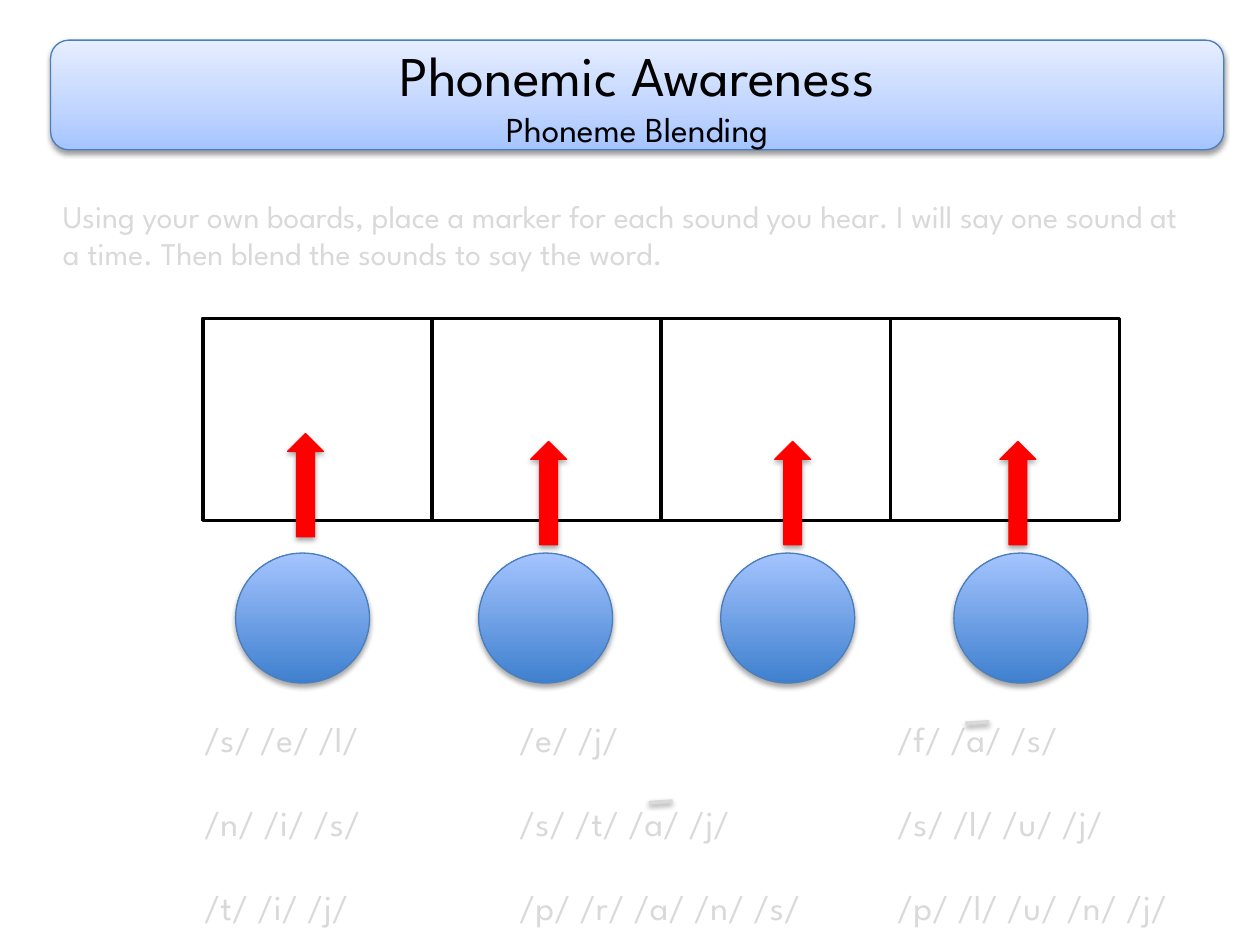
from copy import deepcopy

from lxml.etree import SubElement
from pptx import Presentation
from pptx.dml.color import RGBColor
from pptx.enum.shapes import MSO_CONNECTOR, MSO_SHAPE
from pptx.enum.text import MSO_ANCHOR, PP_ALIGN
from pptx.oxml.ns import qn
from pptx.util import Cm, Pt

FONT = "League Spartan"
color = RGBColor.from_string
BLACK, PALE, RED, BLUE = map(color, ("000000", "D9D9D9", "FF0000", "4B7EBC"))


def add_shadow(shape, opacity, distance):
    """Put a soft shadow below a shape; call it after fill and line are set."""
    properties = shape._element.spPr
    for old_effects in properties.findall(qn("a:effectLst")):
        properties.remove(old_effects)
    effects = SubElement(properties, qn("a:effectLst"))
    shadow = SubElement(effects, qn("a:outerShdw"), blurRad=str(Pt(3.1)),
                        dist=str(Pt(distance)), dir="5400000", rotWithShape="0")
    black = SubElement(shadow, qn("a:srgbClr"), val="000000")
    SubElement(black, qn("a:alpha"), val=str(opacity * 1000))


def fill_gradient(shape, stops):
    """Fill from bottom to top with (position, colour) stops, and outline in blue."""
    shape.fill.gradient()
    shape.fill.gradient_angle = 90
    stop_list = shape._element.spPr.find(qn("a:gradFill")).find(qn("a:gsLst"))
    while len(stop_list) < len(stops):
        stop_list.append(deepcopy(stop_list[0]))
    for stop, (position, hex_color) in zip(shape.fill.gradient_stops, stops):
        stop.position = position
        stop.color.rgb = color(hex_color)
    shape.line.color.rgb = BLUE
    shape.line.width = Pt(0.75)


presentation = Presentation()
presentation.slide_width = Cm(25.4)
presentation.slide_height = Cm(19.05)
slide = presentation.slides.add_slide(presentation.slide_layouts[6])

# Title banner
banner = slide.shapes.add_shape(
    MSO_SHAPE.ROUNDED_RECTANGLE, Cm(1.02), Cm(0.81), Cm(23.65), Cm(2.21))
fill_gradient(banner, [(0, "A4C4FF"), (0.35, "BFD4FF"), (1, "E6EEFF")])
add_shadow(banner, 38, 1.6)
frame = banner.text_frame
frame.vertical_anchor = MSO_ANCHOR.MIDDLE
frame.text = "Phonemic Awareness\nPhoneme Blending"
for paragraph, size in zip(frame.paragraphs, (32, 20)):
    paragraph.alignment = PP_ALIGN.CENTER
    paragraph.font.name = FONT
    paragraph.font.size = Pt(size)
    paragraph.font.color.rgb = BLACK
# A negative indent moves the centred heading slightly left
title_properties = frame.paragraphs[0]._p.get_or_add_pPr()
title_properties.set("marL", "0")
title_properties.set("indent", str(Cm(-0.6)))

# Sound board: four boxes, each with a marker and an arrow
board = slide.shapes.add_group_shape().shapes
for column in range(4):
    box = board.add_shape(MSO_SHAPE.RECTANGLE, Cm(4.09 + 4.62 * column),
                          Cm(6.42), Cm(4.62), Cm(4.07))
    box.shadow.inherit = False
    box.fill.solid()
    box.fill.fore_color.rgb = color("FFFFFF")
    box.line.color.rgb = BLACK
    box.line.width = Pt(2)

for left in (4.75, 9.65, 14.53, 19.23):
    marker = board.add_shape(MSO_SHAPE.OVAL, Cm(left), Cm(11.15), Cm(2.7), Cm(2.62))
    fill_gradient(marker, [(0, "3F80CE"), (1, "A4C4FF")])
    add_shadow(marker, 35, 1.8)

for left, top in ((5.12, 9.42), (10.02, 9.58), (14.94, 9.58), (19.48, 9.58)):
    arrow = board.add_shape(MSO_SHAPE.RIGHT_ARROW, Cm(left), Cm(top), Cm(2.08), Cm(0.72))
    arrow.rotation = 270
    arrow.fill.solid()
    arrow.fill.fore_color.rgb = RED
    arrow.line.color.rgb = RED
    arrow.line.width = Pt(0.75)
    add_shadow(arrow, 35, 1.8)

# Instructions
instructions = slide.shapes.add_textbox(Cm(1.02), Cm(3.84), Cm(23.3), Cm(1.8))
instructions.text_frame.word_wrap = True
paragraph = instructions.text_frame.paragraphs[0]
paragraph.text = ("Using your own boards, place a marker for each sound you hear. "
                  "I will say one sound at a time. Then blend the sounds to say the word.")
paragraph.font.name = FONT
paragraph.font.size = Pt(18)
paragraph.font.color.rgb = PALE

# Words to blend, in three columns set by tab stops
word_rows = [
    ("/s/ /e/ /l/", "/e/ /j/", "/f/ /a/ /s/"),
    ("/n/ /i/ /s/", "/s/ /t/ /a/ /j/", "/s/ /l/ /u/ /j/"),
    ("/t/ /i/ /j/", "/p/ /r/ /a/ /n/ /s/", "/p/ /l/ /u/ /n/ /j/"),
]
words = slide.shapes.add_textbox(Cm(2.59), Cm(14.33), Cm(21.46), Cm(4.52))
words.text_frame.word_wrap = True
words.text_frame.text = "\n".join("\t" + "\t".join(row) for row in word_rows)
for number, paragraph in enumerate(words.text_frame.paragraphs):
    paragraph.font.name = FONT
    paragraph.font.size = Pt(20)
    paragraph.font.color.rgb = PALE
    paragraph.space_before = Pt(24 if number else 0)
    properties = paragraph._p.get_or_add_pPr()
    tabs = SubElement(properties, qn("a:tabLst"))
    for position in (1.27, 7.62, 15.24):
        SubElement(tabs, qn("a:tab"), pos=str(Cm(position)), algn="l")
    properties.append(properties.find(qn("a:defRPr")))

# Long-vowel marks over the letter a
for left, top in ((19.46, 14.55), (13.08, 16.15)):
    macron = slide.shapes.add_connector(
        MSO_CONNECTOR.STRAIGHT, Cm(left), Cm(top + 0.03), Cm(left + 0.48), Cm(top))
    macron.line.color.rgb = PALE
    macron.line.width = Pt(2)
    add_shadow(macron, 38, 1.6)

presentation.save("out.pptx")
